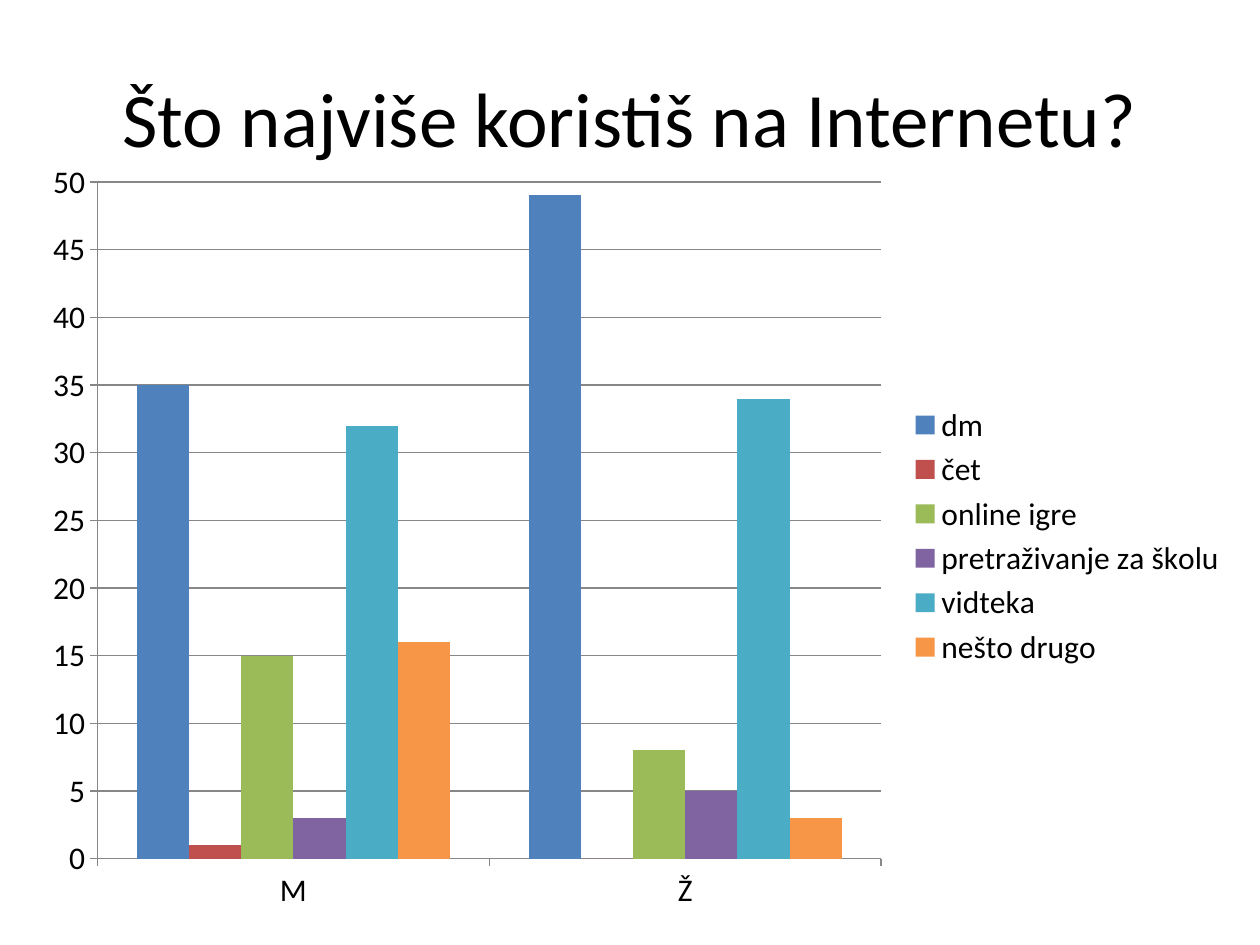
from typing import NamedTuple

from pptx import Presentation
from pptx.chart.data import CategoryChartData
from pptx.dml.color import RGBColor
from pptx.enum.chart import XL_CHART_TYPE, XL_LEGEND_POSITION, XL_TICK_MARK
from pptx.enum.text import MSO_ANCHOR, PP_ALIGN
from pptx.util import Pt

COLUMNS = XL_CHART_TYPE.COLUMN_CLUSTERED
LEGEND_RIGHT = XL_LEGEND_POSITION.RIGHT
TICK_OUT, TICK_NONE = XL_TICK_MARK.OUTSIDE, XL_TICK_MARK.NONE
MIDDLE, CENTER = MSO_ANCHOR.MIDDLE, PP_ALIGN.CENTER

FONT = "Calibri"
TITLE_ONLY = 5
COLORS = {
    "text": "000000",
    "axis": "878787",
    "blue": "4F81BD",
    "red": "C0504D",
    "green": "9BBB59",
    "purple": "8064A2",
    "aqua": "4BACC6",
    "orange": "F79646",
}


class Activity(NamedTuple):
    name: str
    shares: tuple[int, int]
    color: str


GENDERS = ("M", "Ž")
ACTIVITIES = (
    Activity("dm", (35, 49), "blue"),
    Activity("čet", (1, 0), "red"),
    Activity("online igre", (15, 8), "green"),
    Activity("pretraživanje za školu", (3, 5), "purple"),
    Activity("vidteka", (32, 34), "aqua"),
    Activity("nešto drugo", (16, 3), "orange"),
)


def rgb(name: str) -> RGBColor:
    return RGBColor.from_string(COLORS[name])


def style_font(font, size: int) -> None:
    font.name = FONT
    font.size = Pt(size)
    font.color.rgb = rgb("text")


def style_line(line) -> None:
    line.color.rgb = rgb("axis")
    line.width = Pt(0.75)


def set_title(slide, text: str) -> None:
    sp = slide.shapes.title
    sp.left, sp.top, sp.width, sp.height = Pt(36), Pt(21.6), Pt(648), Pt(90)
    tf = sp.text_frame
    tf.text = text
    tf.vertical_anchor = MIDDLE
    p = tf.paragraphs[0]
    p.alignment = CENTER
    style_font(p.runs[0].font, 44)


def add_activity_chart(slide) -> None:
    data = CategoryChartData()
    data.categories = GENDERS
    for activity in ACTIVITIES:
        data.add_series(activity.name, activity.shares)

    frame = slide.shapes.add_chart(
        COLUMNS, Pt(16.56), Pt(84.24), Pt(691.92), Pt(444.24), data
    )
    chart = frame.chart
    chart.has_title = False
    style_font(chart.font, 18)
    chart.has_legend = True
    chart.legend.position = LEGEND_RIGHT
    chart.legend.include_in_layout = False

    plot = chart.plots[0]
    plot.gap_width = 150
    plot.overlap = 0
    plot.vary_by_categories = False
    for series, activity in zip(plot.series, ACTIVITIES):
        series.format.fill.solid()
        series.format.fill.fore_color.rgb = rgb(activity.color)

    for axis in (chart.category_axis, chart.value_axis):
        axis.major_tick_mark = TICK_OUT
        axis.minor_tick_mark = TICK_NONE
        style_line(axis.format.line)
    axis = chart.value_axis
    axis.minimum_scale, axis.maximum_scale, axis.major_unit = 0, 50, 5
    axis.has_major_gridlines = True
    style_line(axis.major_gridlines.format.line)


def main() -> None:
    prs = Presentation()
    prs.slide_width, prs.slide_height = Pt(720), Pt(540)
    slide = prs.slides.add_slide(prs.slide_layouts[TITLE_ONLY])
    set_title(slide, "Što najviše koristiš na Internetu?")
    add_activity_chart(slide)
    prs.save("out.pptx")


if __name__ == "__main__":
    main()
